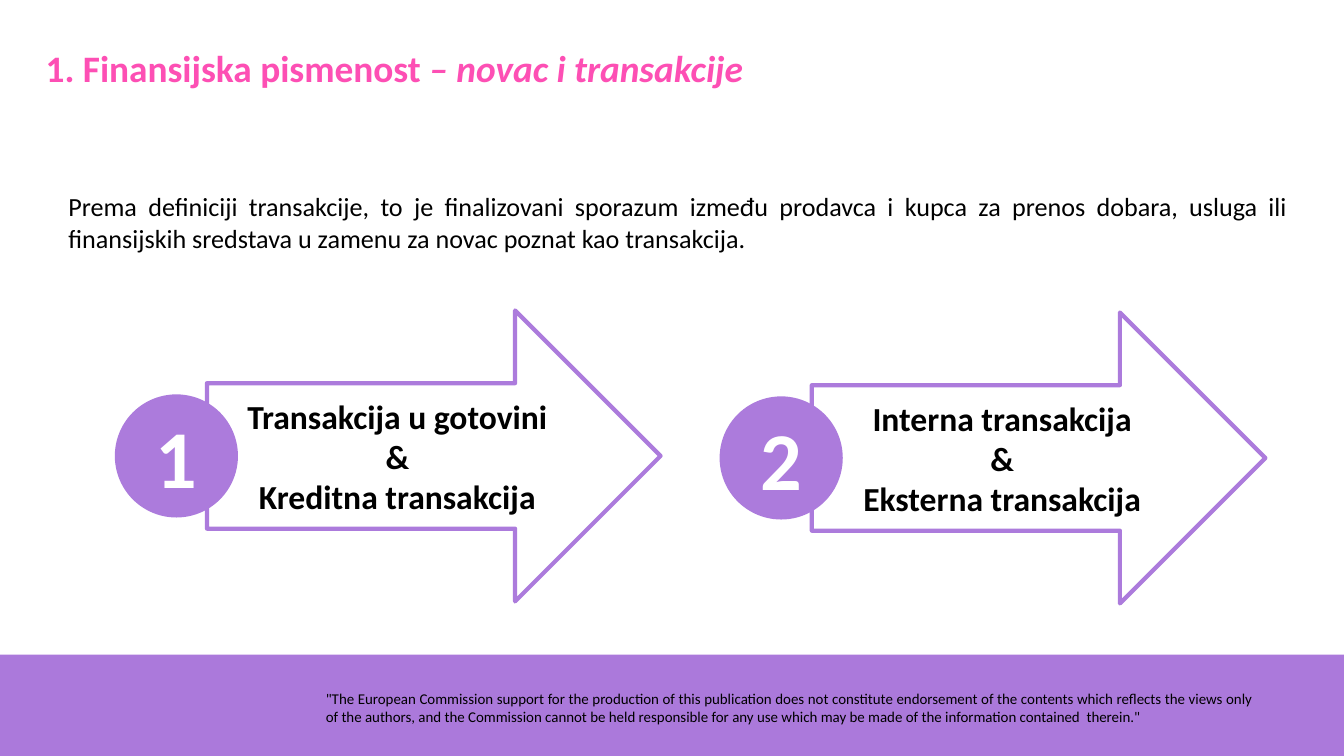
from pptx import Presentation
from pptx.dml.color import RGBColor
from pptx.enum.shapes import MSO_SHAPE
from pptx.enum.text import MSO_ANCHOR, MSO_AUTO_SIZE, PP_ALIGN
from pptx.util import Inches, Pt

PURPLE = RGBColor(0xAC, 0x7B, 0xDC)
BAND_PURPLE = RGBColor(0xAB, 0x79, 0xDB)
PINK = RGBColor(0xFD, 0x4F, 0xB4)
BLACK = RGBColor(0, 0, 0)
WHITE = RGBColor(0xFF, 0xFF, 0xFF)


def write(frame, lines, font="Calibri", size=28, color=BLACK, bold=False,
          italic_tail="", align=PP_ALIGN.LEFT, anchor=MSO_ANCHOR.TOP, spacing=None):
    """Fill a text frame, one paragraph a line; italic_tail ends the last one."""
    frame.word_wrap = True
    frame.auto_size = MSO_AUTO_SIZE.NONE
    frame.vertical_anchor = anchor
    for index, line in enumerate(lines):
        paragraph = frame.add_paragraph() if index else frame.paragraphs[0]
        paragraph.alignment = align
        paragraph.line_spacing = spacing
        parts = [(line, False)]
        if italic_tail and index == len(lines) - 1:
            parts.append((italic_tail, True))
        for text, italic in parts:
            run = paragraph.add_run()
            run.text = text
            run.font.name = font
            run.font.size = Pt(size)
            run.font.bold = bold
            run.font.italic = italic
            run.font.color.rgb = color


class SlideBuilder:
    """Holds the style and the current slide."""

    line_width = Pt(4.5)
    arrow_size = (6.75, 4.33)
    badge_size = 1.77
    badge_overlap = 0.43

    def __init__(self, slide):
        self.slide = slide

    def title(self, text, left, top, width, height, **style):
        title = self.slide.shapes.title
        title.left, title.top = Inches(left), Inches(top)
        title.width, title.height = Inches(width), Inches(height)
        write(title.text_frame, [text], **style)

    def text(self, text, left, top, width, height, **style):
        box = self.slide.shapes.add_textbox(
            Inches(left), Inches(top), Inches(width), Inches(height))
        write(box.text_frame, [text], **style)

    def shape(self, kind, left, top, width, height, fill=None, line=None):
        shape = self.slide.shapes.add_shape(
            kind, Inches(left), Inches(top), Inches(width), Inches(height))
        shape.shadow.inherit = False
        if fill is None:
            shape.fill.background()
        else:
            shape.fill.solid()
            shape.fill.fore_color.rgb = fill
        if line is None:
            shape.line.fill.background()
        else:
            shape.line.color.rgb = line
            shape.line.width = self.line_width
        return shape

    def numbered_arrow(self, number, lines, left, top):
        """An outlined arrow with a round number badge over its tail."""
        width, height = self.arrow_size
        centred = dict(bold=True, align=PP_ALIGN.CENTER, anchor=MSO_ANCHOR.MIDDLE)
        arrow = self.shape(MSO_SHAPE.RIGHT_ARROW, left, top, width, height, line=PURPLE)
        write(arrow.text_frame, lines, size=36, **centred)
        size = self.badge_size
        badge = self.shape(MSO_SHAPE.OVAL, left + self.badge_overlap - size,
                           top + (height - size) / 2, size, size,
                           fill=PURPLE, line=PURPLE)
        write(badge.text_frame, [str(number)], size=88, color=WHITE, **centred)


def main():
    presentation = Presentation()
    presentation.slide_width = Inches(20)
    presentation.slide_height = Inches(11.25)
    title_only = presentation.slide_layouts[5]
    builder = SlideBuilder(presentation.slides.add_slide(title_only))

    # Footer band with disclaimer
    builder.shape(MSO_SHAPE.RECTANGLE, 0, 9.74, 20, 1.51, fill=BAND_PURPLE)
    builder.text(
        '"The European Commission support for the production of this publication '
        "does not constitute endorsement of the contents which reflects the views "
        "only of the authors, and the Commission cannot be held responsible for any "
        'use which may be made of the information contained  therein."',
        4.75, 10.21, 14, 0.55, size=16, align=PP_ALIGN.JUSTIFY, spacing=1.01)

    # Title and definition
    builder.title("1. Finansijska pismenost ", 0.58, 0.62, 13.67, 0.77, size=40,
                  color=PINK, bold=True, italic_tail="– novac i transakcije")
    builder.text(
        "Prema definiciji transakcije, to je finalizovani sporazum između prodavca "
        "i kupca za prenos dobara, usluga ili finansijskih sredstava u zamenu za "
        "novac poznat kao transakcija.",
        0.92, 2.79, 18.33, 1.04, align=PP_ALIGN.JUSTIFY)

    # Kinds of transaction
    builder.numbered_arrow(
        1, ["Transakcija u gotovini", "&", "Kreditna transakcija"], 3.08, 4.62)
    builder.numbered_arrow(
        2, ["Interna transakcija", "&", "Eksterna transakcija"], 12.08, 4.65)

    presentation.save("out.pptx")


if __name__ == "__main__":
    main()
